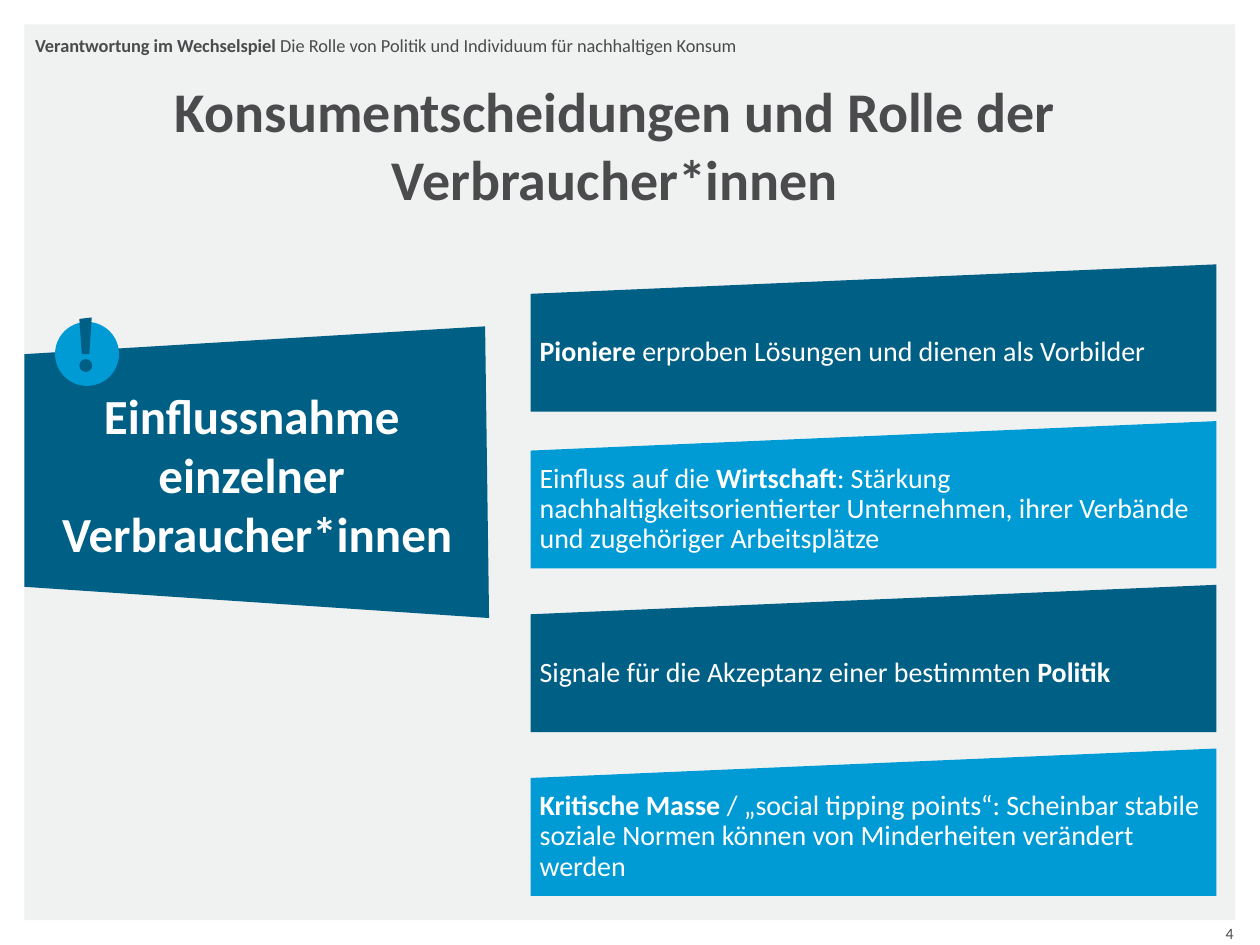
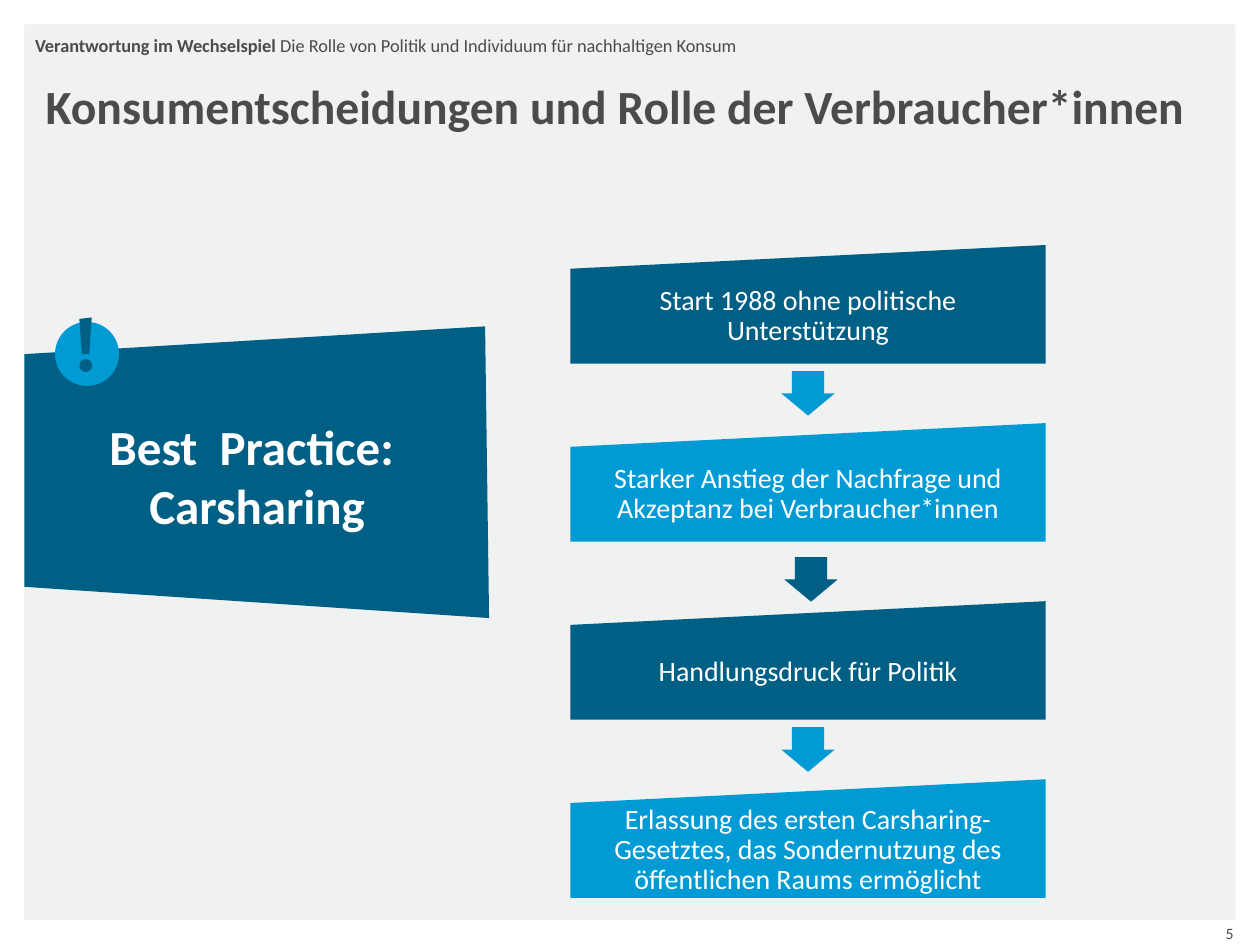
from dataclasses import dataclass
from typing import NamedTuple

from pptx import Presentation
from pptx import util as u
from pptx.dml.color import RGBColor
from pptx.enum import shapes, text

FONT = "Calibri"
WHITE = "FFFFFF"
GREY = "F0F1F1"
INK = "4B4B4D"
NAVY = "005F85"
SKY = "009BD5"
HEADING = "Konsumentscheidungen und Rolle der Verbraucher*innen"

LEFT, CENTER, RIGHT = text.PP_ALIGN.LEFT, text.PP_ALIGN.CENTER, text.PP_ALIGN.RIGHT
TOP, MIDDLE, BOTTOM = text.MSO_ANCHOR.TOP, text.MSO_ANCHOR.MIDDLE, text.MSO_ANCHOR.BOTTOM
SHAPE = shapes.MSO_SHAPE

PANEL = [(0.49, 7.14), (9.78, 6.58), (9.86, 12.46), (0.49, 11.83)]
EXCLAMATION_STROKE = [(1.8, 7.14), (1.65, 7.14), (1.6, 6.43), (1.85, 6.4)]


class Box(NamedTuple):
    left: float
    top: float
    width: float
    height: float

    def lengths(self) -> list[u.Length]:
        return [u.Cm(value) for value in self]


class Run(NamedTuple):
    text: str
    bold: bool = False


class Style(NamedTuple):
    size: float
    color: str
    align: text.PP_ALIGN = LEFT
    anchor: text.MSO_ANCHOR = TOP
    inset: float = 0
    line_spacing: float | None = None


@dataclass
class Card:
    box: Box
    color: str
    runs: list[Run]
    align: text.PP_ALIGN = LEFT


@dataclass
class Arrow:
    box: Box
    color: str


def rgb(color: str) -> RGBColor:
    return RGBColor.from_string(color)


def paint(shape, color: str) -> None:
    shape.shadow.inherit = False
    shape.fill.solid()
    shape.fill.fore_color.rgb = rgb(color)
    shape.line.fill.background()


def add_preset(slide, kind: shapes.MSO_SHAPE, box: Box, color: str):
    shape = slide.shapes.add_shape(kind, *box.lengths())
    paint(shape, color)
    return shape


def add_polygon(slide, points: list[tuple[float, float]], color: str) -> None:
    start, *rest = [(u.Cm(x), u.Cm(y)) for x, y in points]
    builder = slide.shapes.build_freeform(*start)
    builder.add_line_segments(rest, close=True)
    paint(builder.convert_to_shape(), color)


def write(shape, runs: list[Run], style: Style) -> None:
    frame = shape.text_frame
    frame.word_wrap = True
    frame.auto_size = text.MSO_AUTO_SIZE.NONE
    frame.vertical_anchor = style.anchor
    frame.margin_left = frame.margin_right = u.Cm(style.inset)
    frame.margin_top = frame.margin_bottom = u.Cm(style.inset)
    paragraph = frame.paragraphs[0]
    paragraph.alignment = style.align
    paragraph.line_spacing = style.line_spacing
    paragraph.font.name = FONT
    paragraph.font.size = u.Pt(style.size)
    paragraph.font.color.rgb = rgb(style.color)
    for part in runs:
        for index, line in enumerate(part.text.split("\n")):
            if index:
                paragraph.add_line_break()
            run = paragraph.add_run()
            run.text = line
            run.font.name = FONT
            run.font.size = u.Pt(style.size)
            run.font.color.rgb = rgb(style.color)
            run.font.bold = part.bold


def add_text(slide, box: Box, runs: list[Run], style: Style) -> None:
    write(slide.shapes.add_textbox(*box.lengths()), runs, style)


def add_master_background(presentation, slide) -> None:
    background = add_preset(slide, SHAPE.RECTANGLE, Box(0.49, 0.49, 24.41, 18.06), GREY)
    background.element.nvSpPr.cNvPr.set("id", "100")
    presentation.slide_master.shapes.element.insert(2, background.element)


def add_base_slide(presentation, number: int, title_size: float):
    slide = presentation.slides.add_slide(presentation.slide_layouts[5])
    title = slide.shapes.title
    title.left, title.top, title.width, title.height = Box(0.71, 1.55, 23.39, 1.57).lengths()
    write(title, [Run(HEADING, True)], Style(title_size, INK, CENTER))
    header = [
        Run("Verantwortung im Wechselspiel ", True),
        Run("Die Rolle von Politik und Individuum für nachhaltigen Konsum"),
    ]
    add_text(slide, Box(0.71, 0.69, 23.39, 0.64), header, Style(10.5, INK))
    add_text(slide, Box(23.32, 18.57, 1.55, 0.48), [Run(str(number))],
             Style(9, INK, RIGHT, MIDDLE))
    return slide


def add_panel(slide, box: Box, label: str) -> None:
    add_polygon(slide, PANEL, NAVY)
    add_text(slide, box, [Run(label, True)], Style(28, WHITE, CENTER, BOTTOM))
    add_preset(slide, SHAPE.OVAL, Box(1.11, 6.49, 1.29, 1.29), SKY)
    add_preset(slide, SHAPE.OVAL, Box(1.6, 7.24, 0.26, 0.26), NAVY)
    add_polygon(slide, EXCLAMATION_STROKE, NAVY)


def add_card(slide, card: Card) -> None:
    shape = add_preset(slide, SHAPE.FLOWCHART_MANUAL_INPUT, card.box, card.color)
    write(shape, card.runs, Style(16, WHITE, card.align, MIDDLE, 0.18, 0.9))


def add_arrow(slide, arrow: Arrow) -> None:
    shape = add_preset(slide, SHAPE.DOWN_ARROW, arrow.box, arrow.color)
    shape.adjustments[0] = 0.6
    shape.adjustments[1] = 0.5


def alternate(index: int) -> str:
    return (NAVY, SKY)[index % 2]


def build_influence(slide) -> None:
    add_panel(slide, Box(0.97, 7.75, 8.43, 3.58),
              "Einflussnahme \neinzelner \nVerbraucher*innen")
    influences = [
        (5.33, [Run("Pioniere", True),
                Run(" erproben Lösungen und dienen als Vorbilder")]),
        (8.49, [Run("Einfluss auf die "), Run("Wirtschaft", True),
                Run(": Stärkung nachhaltigkeitsorientierter Unternehmen, "
                    "ihrer Verbände und zugehöriger Arbeitsplätze")]),
        (11.79, [Run("Signale für die Akzeptanz einer bestimmten "),
                 Run("Politik", True)]),
        (15.09, [Run("Kritische Masse ", True),
                 Run("/ „social tipping points“: Scheinbar stabile soziale Normen "
                     "können von Minderheiten verändert werden")]),
    ]
    for index, (top, runs) in enumerate(influences):
        add_card(slide, Card(Box(10.7, top, 13.82, 2.97), alternate(index), runs))


def build_carsharing(slide) -> None:
    steps = [
        "Start 1988 ohne politische Unterstützung",
        "Starker Anstieg der Nachfrage und Akzeptanz bei Verbraucher*innen",
        "Handlungsdruck für Politik",
        "Erlassung des ersten Carsharing-Gesetztes, das Sondernutzung "
        "des öffentlichen Raums ermöglicht",
    ]
    for index, step in enumerate(steps):
        box = Box(11.5, 4.94 + 3.59 * index, 9.58, 2.39)
        add_card(slide, Card(box, alternate(index), [Run(step)], CENTER))
    for index, (left, top) in enumerate([(15.75, 7.48), (15.81, 11.23), (15.75, 14.66)]):
        add_arrow(slide, Arrow(Box(left, top, 1.08, 0.9), alternate(index + 1)))
    add_panel(slide, Box(0.97, 7.8, 8.43, 2.97), "Best  Practice: \nCarsharing")


def main() -> None:
    presentation = Presentation()
    presentation.slide_width = u.Cm(25.4)
    presentation.slide_height = u.Cm(19.05)
    influence = add_base_slide(presentation, 4, 32)
    add_master_background(presentation, influence)
    build_influence(influence)
    build_carsharing(add_base_slide(presentation, 5, 27.2))
    presentation.save("out.pptx")


if __name__ == "__main__":
    main()
